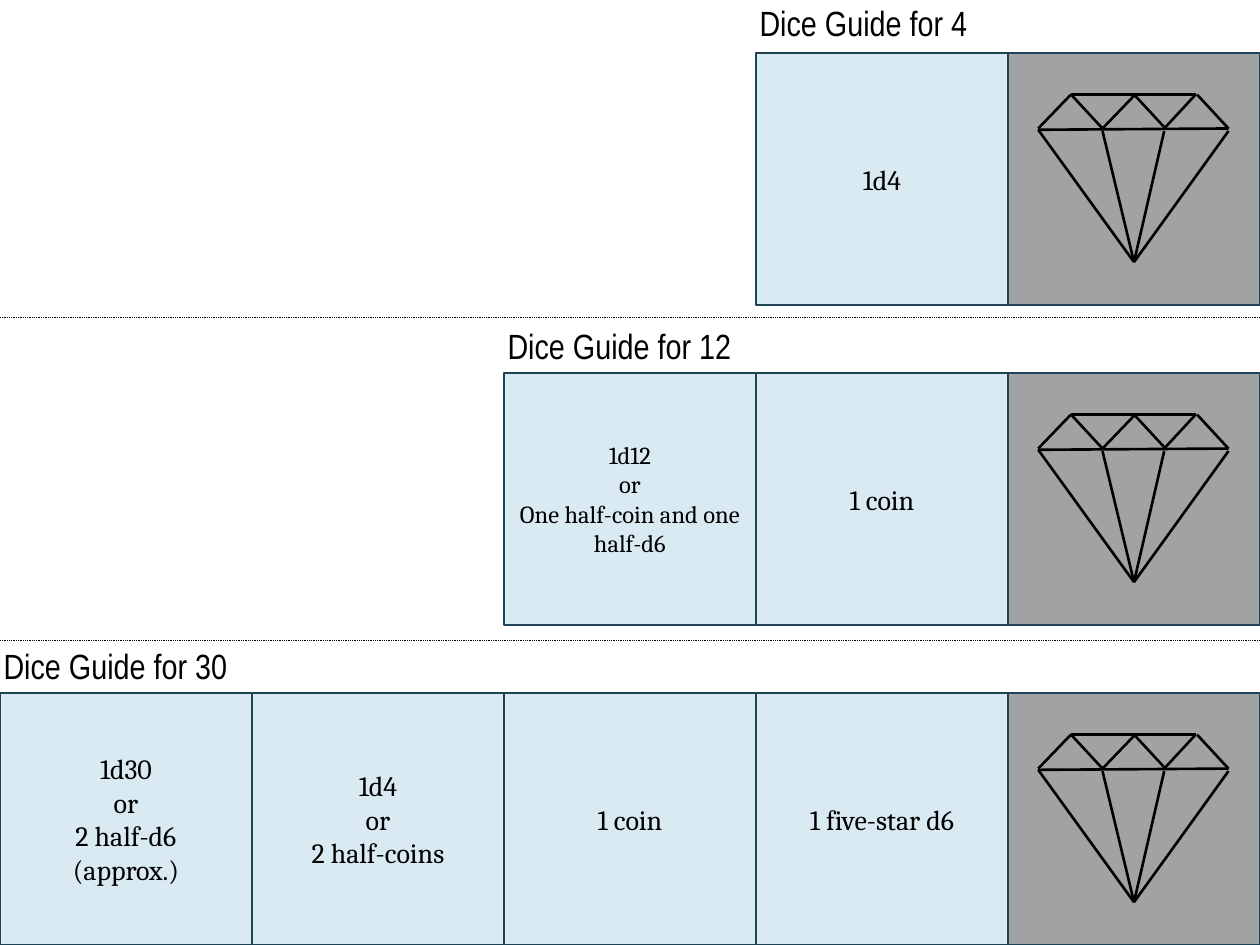
from copy import deepcopy

from lxml.etree import SubElement
from pptx import Presentation
from pptx.dml.color import RGBColor
from pptx.enum.dml import MSO_LINE
from pptx.enum.shapes import MSO_CONNECTOR, MSO_SHAPE
from pptx.enum.text import MSO_ANCHOR, PP_ALIGN
from pptx.oxml.ns import qn
from pptx.util import Pt

PX = 9144  # 100 px to the inch
SIDE = 200
WIDE, HIGH = 1000, 750

# title, title top, cell top, cells as (text, size)
ROWS = [
    ("Dice Guide for 4", -4, 42, [("1d4", 16)]),
    ("Dice Guide for 12", 252, 296, [
        ("1d12\nor\nOne half-coin and one half-d6", 14),
        ("1 coin", 16)]),
    ("Dice Guide for 30", 506, 550, [
        ("1d30\nor\n2 half-d6\n(approx.)", 16),
        ("1d4\nor\n2 half-coins", 16),
        ("1 coin", 16),
        ("1 five-star d6", 16)]),
]

# gem edges inside the last cell
GEM = [
    (24, 61, 175, 60), (24, 61, 100, 166), (175, 62, 100, 166),
    (24, 60, 50, 33), (175, 60, 150, 33), (50, 33, 149, 33),
    (75, 60, 50, 33), (75, 60, 101, 33), (125, 60, 100, 33),
    (124, 60, 149, 33), (100, 166, 124, 62), (100, 166, 75, 62),
]

deck = Presentation()
deck.slide_width, deck.slide_height = WIDE * PX, HIGH * PX
slide = deck.slides.add_slide(deck.slide_layouts[6])
shapes = slide.shapes


def color(code):
    return RGBColor.from_string(code)


def write(shape, text, face, size, align):
    frame = shape.text_frame
    frame.word_wrap = True
    frame.vertical_anchor = MSO_ANCHOR.MIDDLE
    para = frame.paragraphs[0]
    para.text = text
    para.alignment = align
    for run in para.runs:
        run.font.name = face
        run.font.size = Pt(size)
        run.font.color.rgb = color("000000")
    # line breaks take the same size as the text
    for br in para._p.findall(qn("a:br")):
        br.append(deepcopy(para.runs[0]._r.rPr))
    return para


lines = []
for title, head, top, cells in ROWS:
    # cells, flush right, with the gem cell last
    left = WIDE - SIDE * (len(cells) + 1)
    for i, (text, size) in enumerate(cells + [("", 16)]):
        box = shapes.add_shape(MSO_SHAPE.RECTANGLE, (left + i * SIDE) * PX,
                               top * PX, SIDE * PX, SIDE * PX)
        box.shadow.inherit = False
        box.fill.solid()
        box.fill.fore_color.rgb = color("D9EAF3" if text else "A0A2A4")
        box.line.color.rgb = color("1D4355")
        box.line.width = Pt(1.5)
        if text:
            write(box, text, "Cambria", size, PP_ALIGN.CENTER)

    # row title
    label = shapes.add_textbox((left - 7) * PX, head * PX, 200 * PX, 48 * PX)
    para = write(label, title, "Arial Narrow", 20, PP_ALIGN.LEFT)
    para.line_spacing = 0.9

    # gem
    x = WIDE - SIDE
    for x1, y1, x2, y2 in GEM:
        lines.append((x + x1, top + y1, x + x2, top + y2, 1.5, MSO_LINE.SOLID))

# dotted rules between rows
for y in (252, 508):
    lines.append((0, y, WIDE, y, 0.5, MSO_LINE.ROUND_DOT))

# all lines
for x1, y1, x2, y2, width, dash in lines:
    edge = shapes.add_connector(MSO_CONNECTOR.STRAIGHT,
                                x1 * PX, y1 * PX, x2 * PX, y2 * PX)
    edge.line.color.rgb = color("000000")
    edge.line.width = Pt(width)
    edge.line.dash_style = dash
    SubElement(edge._element.spPr, qn("a:effectLst"))

deck.save("out.pptx")
